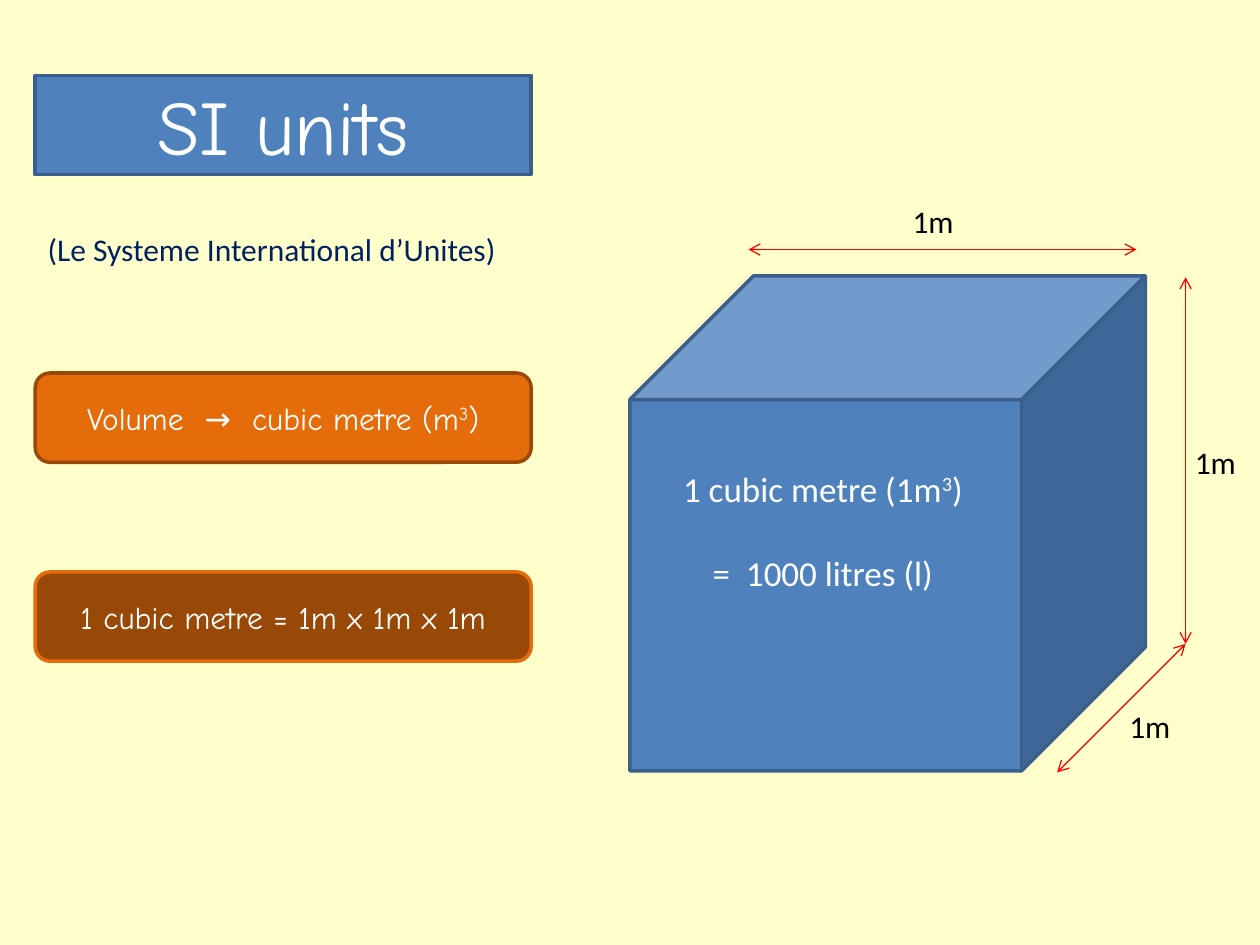
"""Build a slide on SI units of volume with a labelled cubic metre."""
from lxml.etree import SubElement
from pptx import Presentation
from pptx.dml.color import RGBColor
from pptx.enum.shapes import MSO_CONNECTOR as Connector, MSO_SHAPE as Shape
from pptx.enum.text import MSO_ANCHOR as Anchor, MSO_AUTO_SIZE as AutoSize, PP_ALIGN as Align
from pptx.oxml.ns import qn
from pptx.util import Cm, Pt

CREAM = RGBColor(0xFF, 0xFF, 0xCC)
BLUE = RGBColor(0x4F, 0x81, 0xBD)
STEEL = RGBColor(0x3A, 0x5F, 0x8C)
NAVY = RGBColor(0x00, 0x20, 0x60)
ORANGE = RGBColor(0xE4, 0x6C, 0x0A)
BROWN = RGBColor(0x98, 0x48, 0x07)
RED = RGBColor(0xFF, 0x00, 0x00)
WHITE = RGBColor(0xFF, 0xFF, 0xFF)
BLACK = RGBColor(0x00, 0x00, 0x00)


class UnitsSlide:
    """Hold the style and the slide being drawn."""

    heading_font = "Comic Neue"
    body_font = "Calibri"

    def __init__(self, slide):
        """Keep the shapes of the slide."""
        self.shapes = slide.shapes

    def add_words(self, frame, paragraphs, font, size, color, align=Align.CENTER, gap=0):
        """Put paragraphs of (text, raised) runs into a frame."""
        frame.word_wrap = True
        for index, runs in enumerate(paragraphs):
            paragraph = frame.add_paragraph() if index else frame.paragraphs[0]
            paragraph.alignment = align
            paragraph.space_before = Pt(gap if index else 0)
            for text, raised in runs:
                run = paragraph.add_run()
                run.text = text
                run.font.name = font
                run.font.size = Pt(size)
                run.font.color.rgb = color
                if raised:
                    run.font._element.set("baseline", "30000")

    def panel(self, kind, box, fill, line=None, runs=None, size=18):
        """Add a filled shape with an optional outline and heading text."""
        shape = self.shapes.add_shape(kind, *map(Cm, box))
        shape.shadow.inherit = False
        shape.fill.solid()
        shape.fill.fore_color.rgb = fill
        if line is None:
            shape.line.fill.background()
        else:
            shape.line.color.rgb = line
            shape.line.width = Pt(2)
        if runs:
            shape.text_frame.vertical_anchor = Anchor.MIDDLE
            self.add_words(shape.text_frame, [runs], self.heading_font, size, WHITE)

    def label(self, box, paragraphs, color=BLACK, size=18, align=Align.CENTER, gap=0):
        """Add a text box in the body font."""
        frame = self.shapes.add_textbox(*map(Cm, box)).text_frame
        self.add_words(frame, paragraphs, self.body_font, size, color, align, gap)
        frame.auto_size = AutoSize.SHAPE_TO_FIT_TEXT

    def dimension(self, start, end):
        """Add a thin red line with an open arrowhead at both ends."""
        arrow = self.shapes.add_connector(Connector.STRAIGHT, *map(Cm, start + end))
        arrow.line.color.rgb = RED
        arrow.line.width = Pt(0.75)
        properties = arrow._element.spPr
        outline = properties.find(qn("a:ln"))
        for tip in ("a:headEnd", "a:tailEnd"):
            SubElement(outline, qn(tip), type="arrow")
        SubElement(properties, qn("a:effectLst"))


def main():
    """Draw the slide and save it."""
    deck = Presentation()
    deck.slide_width, deck.slide_height = Cm(25.4), Cm(19.05)
    units = UnitsSlide(deck.slides.add_slide(deck.slide_layouts[6]))
    left, width, banner_height = 0.71, 10, 1.8

    units.panel(Shape.RECTANGLE, (0, 0, 25.4, 19.05), CREAM)
    units.panel(Shape.RECTANGLE, (left, 1.52, width, 2), BLUE, STEEL,
                [("SI units", False)], 44)
    units.label((left, 4.52, 12, 1.02), [[("(Le Systeme International d’Unites)", False)]],
                NAVY, align=Align.LEFT)

    volume = [("Volume  →  cubic metre (m", False), ("3", True), (")", False)]
    definition = [("1 cubic metre = 1m x 1m x 1m", False)]
    for top, fill, line, runs in ((7.52, ORANGE, BROWN, volume),
                                  (11.53, BROWN, ORANGE, definition)):
        units.panel(Shape.ROUNDED_RECTANGLE, (left, top, width, banner_height), fill, line, runs)

    units.panel(Shape.CUBE, (12.7, 5.56, 10.39, 9.98), BLUE, STEEL)
    corner = (23.9, 12.98)
    for start, end, label_at in (((15.09, 5.03), (22.91, 5.03), (17.91, 3.94)),
                                 ((23.9, 5.59), corner, (23.6, 8.81)),
                                 (corner, (21.31, 15.57), (22.28, 14.12))):
        units.dimension(start, end)
        units.label((*label_at, 1.8, 1.02), [[("1m", False)]])

    capacity = [[("1 cubic metre (1m", False), ("3", True), (")", False)],
                [("=  1000 litres (l)", False)]]
    units.label((13.49, 9.3, 6.2, 2.82), capacity, WHITE, 20, gap=24)
    deck.save("out.pptx")


if __name__ == "__main__":
    main()
